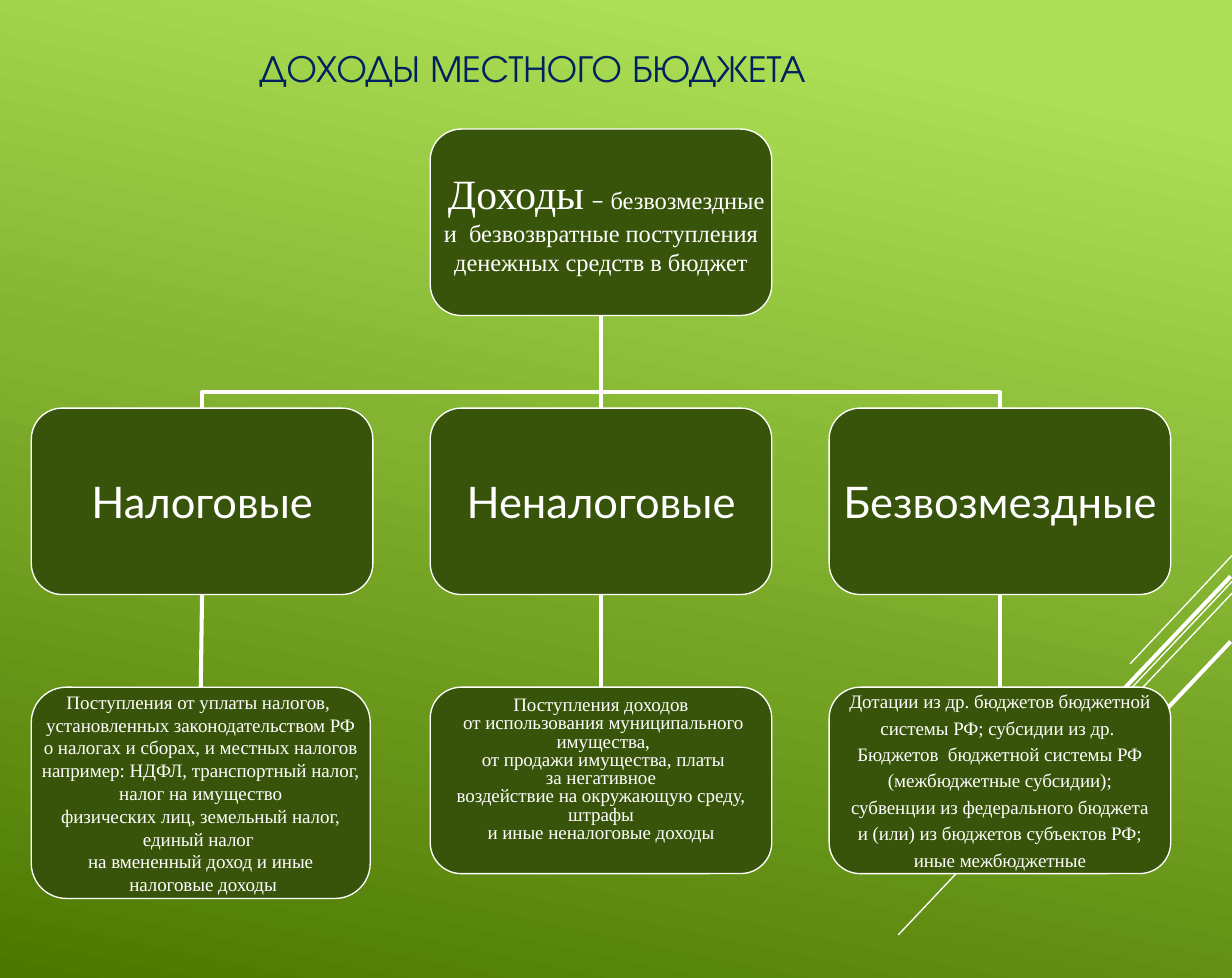
from dataclasses import dataclass

from lxml import etree
from pptx import Presentation
from pptx import util as u
from pptx.dml import color
from pptx.enum import shapes, text
from pptx.oxml import ns


@dataclass(frozen=True)
class Theme:
    white: str = "FFFFFF"
    box: str = "38540A"
    title: str = "002060"
    light: str = "ACDF55"
    dark: str = "4C7800"
    serif: str = "Times New Roman"
    sans: str = "Lato"
    heading: str = "TeX Gyre Adventor"
    title_size: float = 21
    term_size: float = 23
    category_size: float = 24
    definition_size: float = 13.5
    detail_size: float = 10.5
    thin: float = 0.75
    thick: float = 2.25


THEME = Theme()
BOX_WIDTH, BOX_HEIGHT = 2.62, 1.43
COLUMN_LEFT, COLUMN_STEP = 0.24, 3.06
ROOT_TOP, CATEGORY_TOP, DETAIL_TOP = 0.99, 3.13, 5.27
TOP, BOTTOM = 0, 2

STRIPES = [
    ((9.45, 4.26), (8.67, 5.09), THEME.thin),
    ((9.45, 4.46), (6.89, 7.17), THEME.thin),
    ((9.45, 4.55), (7.82, 6.27), THEME.thin),
    ((9.44, 4.42), (7.95, 5.99), THEME.thick),
    ((9.44, 4.92), (8.36, 6.06), THEME.thick),
]
DEFINITION = [
    [(" Доходы", THEME.serif, THEME.term_size),
     (" ", THEME.serif, THEME.definition_size),
     ("–", THEME.sans, THEME.definition_size),
     (" безвозмездные", THEME.serif, THEME.definition_size)],
    [(" и  безвозвратные поступления ", THEME.serif, THEME.definition_size)],
    [("денежных средств в бюджет", THEME.serif, THEME.definition_size)],
]
BRANCHES = [
    ("Налоговые", [
        "Поступления от уплаты налогов, ",
        "установленных законодательством РФ",
        "о налогах и сборах, и местных налогов",
        "например: НДФЛ, транспортный налог,",
        "налог на имущество",
        " физических лиц, земельный налог, ",
        "единый налог ",
        "на вмененный доход и иные",
        " налоговые доходы",
    ], {"width": 2.6, "height": 1.62}, {}),
    ("Неналоговые", [
        "Поступления доходов",
        " от использования муниципального",
        " имущества,",
        " от продажи имущества, платы",
        " за негативное ",
        "воздействие на окружающую среду,",
        " штрафы ",
        "и иные неналоговые доходы",
    ], {"bottom_inset": 0.16}, {"line_spacing": 0.8}),
    ("Безвозмездные", [
        "Дотации из др. бюджетов бюджетной",
        "системы РФ; субсидии из др. ",
        "Бюджетов  бюджетной системы РФ",
        "(межбюджетные субсидии);",
        "субвенции из федерального бюджета",
        " и (или) из бюджетов субъектов РФ; ",
        "иные межбюджетные",
    ], {}, {"space_before": u.Pt(2)}),
]


def apply_format(target, values):
    for name, value in values.items():
        setattr(target, name, value)


def rgb(value):
    return color.RGBColor.from_string(value)


def add_span(para, words, font, size, tint=THEME.white):
    span = para.add_run()
    span.text = words
    apply_format(span.font, {"name": font, "size": u.Pt(size)})
    span.font.color.rgb = rgb(tint)


def paint_background(page):
    fill = page.background.fill
    fill.gradient()
    fill.gradient_angle = 258
    for stop, tint, position in zip(fill.gradient_stops, (THEME.light, THEME.dark), (0.1, 1)):
        stop.color.rgb = rgb(tint)
        stop.position = position


def add_title(page, words):
    title = page.shapes.title
    apply_format(title, {"left": u.Inches(1.89), "top": u.Inches(0.28),
                         "width": u.Inches(6.06), "height": u.Inches(0.47)})
    apply_format(title.text_frame, {"vertical_anchor": text.MSO_ANCHOR.MIDDLE,
                                    "word_wrap": True})
    para = title.text_frame.paragraphs[0]
    para.alignment = text.PP_ALIGN.LEFT
    add_span(para, words, THEME.heading, THEME.title_size, THEME.title)


def add_line(page, start, end, width, kind=shapes.MSO_CONNECTOR.STRAIGHT):
    line = page.shapes.add_connector(kind, *(u.Inches(value) for value in (*start, *end)))
    line.line.color.rgb = rgb(THEME.white)
    line.line.width = u.Pt(width)
    etree.SubElement(line._element.spPr, ns.qn("a:effectLst"))
    return line


def join(page, child, parent, kind=shapes.MSO_CONNECTOR.STRAIGHT):
    line = add_line(page, (0, 0), (1, 1), THEME.thick, kind)
    line.begin_connect(child, TOP)
    line.end_connect(parent, BOTTOM)
    return line


def join_bent(page, child, parent):
    line = join(page, child, parent, shapes.MSO_CONNECTOR.ELBOW)
    from_right = line.begin_x > line.end_x
    center_x, center_y = line.left + line.width // 2, line.top + line.height // 2
    width, height = line.height, line.width
    apply_format(line, {"left": center_x - width // 2, "top": center_y - height // 2,
                        "width": width, "height": height})
    frame = line._element.spPr.find(ns.qn("a:xfrm"))
    apply_format(frame, {"rot": 90 if from_right else 270,
                         "flipH": from_right, "flipV": False})
    guides = line._element.spPr.find(ns.qn("a:prstGeom")).get_or_add_avLst()
    etree.SubElement(guides, ns.qn("a:gd"), name="adj1", fmla="val 17500")


def add_box(page, column, top, paragraphs, para_format=None,
            width=BOX_WIDTH, height=BOX_HEIGHT, bottom_inset=0):
    left = COLUMN_LEFT + column * COLUMN_STEP
    box = page.shapes.add_shape(shapes.MSO_SHAPE.ROUNDED_RECTANGLE, u.Inches(left),
                                u.Inches(top), u.Inches(width), u.Inches(height))
    box.shadow.inherit = False
    box.fill.solid()
    box.fill.fore_color.rgb = rgb(THEME.box)
    box.line.color.rgb = rgb(THEME.white)
    box.line.width = u.Pt(THEME.thin)
    frame = box.text_frame
    apply_format(frame, {"margin_left": 0, "margin_top": 0, "margin_right": 0,
                         "margin_bottom": u.Inches(bottom_inset), "word_wrap": False,
                         "vertical_anchor": text.MSO_ANCHOR.MIDDLE})
    for index, spans in enumerate(paragraphs):
        para = frame.add_paragraph() if index else frame.paragraphs[0]
        apply_format(para, {"alignment": text.PP_ALIGN.CENTER, **(para_format or {})})
        for span in spans:
            add_span(para, *span)
    return box


def add_branch(page, root, column, name, lines, box_format, para_format):
    category = add_box(page, column, CATEGORY_TOP,
                       [[(name, THEME.sans, THEME.category_size)]])
    details = [[(line, THEME.serif, THEME.detail_size)] for line in lines]
    detail = add_box(page, column, DETAIL_TOP, details, para_format, **box_format)
    join(page, detail, category)
    if column == 1:
        join(page, category, root)
    else:
        join_bent(page, category, root)


def main():
    deck = Presentation()
    apply_format(deck, {"slide_width": u.Inches(9.45), "slide_height": u.Inches(7.5)})
    page = deck.slides.add_slide(deck.slide_layouts.get_by_name("Title Only"))
    paint_background(page)
    for start, end, width in STRIPES:
        add_line(page, start, end, width)
    add_title(page, "ДОХОДЫ МЕСТНОГО БЮДЖЕТА")
    root = add_box(page, 1, ROOT_TOP, DEFINITION)
    for column, branch in enumerate(BRANCHES):
        add_branch(page, root, column, *branch)
    deck.save("out.pptx")


if __name__ == "__main__":
    main()
